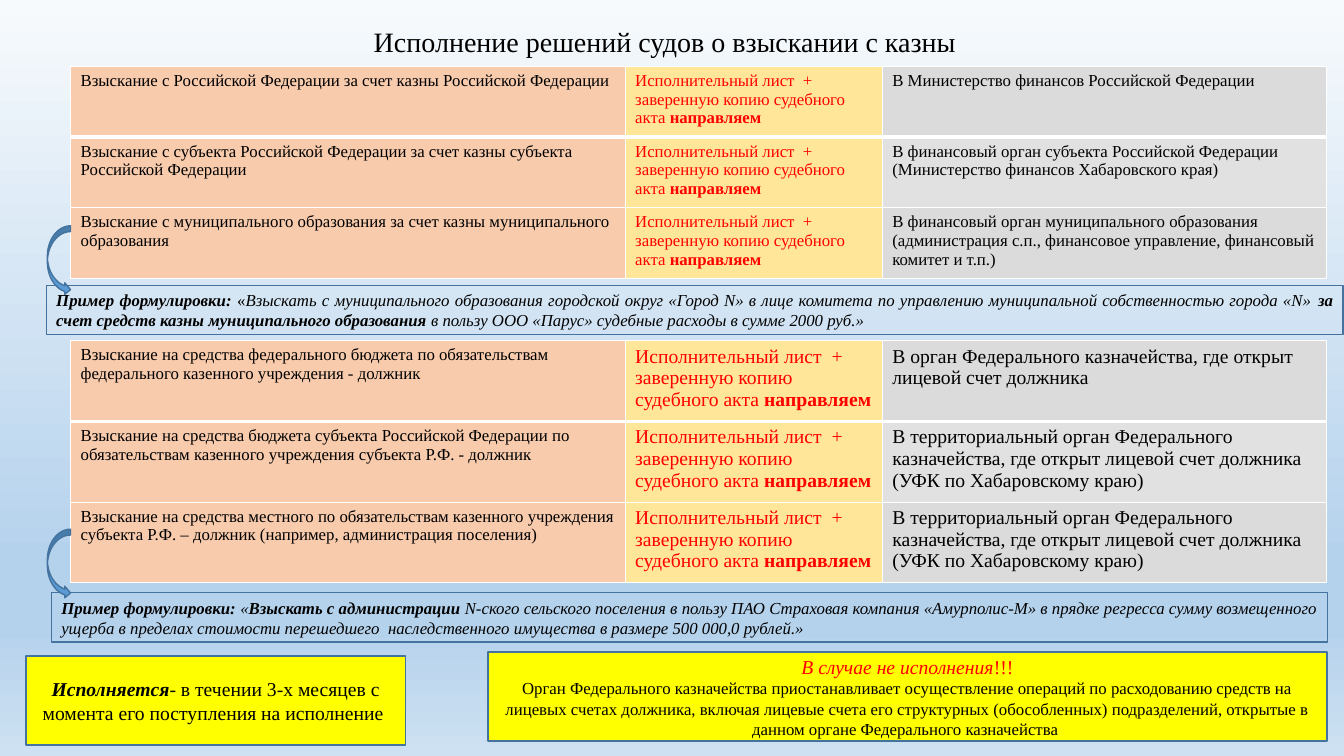
from copy import deepcopy
from dataclasses import dataclass

from lxml.etree import SubElement
from pptx import Presentation
from pptx.dml.color import RGBColor
from pptx.enum.shapes import MSO_SHAPE as Preset
from pptx.enum.text import MSO_ANCHOR as Anchor, PP_ALIGN as Align
from pptx.oxml.ns import qn
from pptx.util import Inches, Pt


@dataclass(frozen=True)
class Theme:
    font: str = "Times New Roman"
    title: int = 20
    large: int = 14
    small: int = 12
    black: str = "000000"
    red: str = "FF0000"
    white: str = "FFFFFF"
    outline: str = "43739E"
    arrow: str = "5B9BD5"
    yellow: str = "FFFF00"
    claim: str = "F8CBAD"
    action: str = "FFE699"
    recipients: tuple = ("DBDBDB", "E1E1E1")
    backdrop: tuple = ((0, "F7FAFD"), (0.74, "B5D2EC"), (0.83, "B5D2EC"), (1, "CEE1F2"))


THEME = Theme()

TITLE = "Исполнение решений судов о взыскании с казны"
ACTION = [("Исполнительный лист  + заверенную копию судебного акта ", ""), ("направляем", "b")]
TERRITORIAL = (
    "В территориальный орган Федерального казначейства, где открыт лицевой счет должника "
    "(УФК по Хабаровскому краю)"
)
TREASURY_ROWS = [
    ("Взыскание с Российской Федерации за счет казны Российской Федерации",
     "В Министерство финансов Российской Федерации"),
    ("Взыскание с субъекта Российской Федерации за счет казны субъекта Российской Федерации",
     "В финансовый орган субъекта Российской Федерации (Министерство финансов Хабаровского края)"),
    ("Взыскание с муниципального образования за счет казны муниципального образования",
     "В финансовый орган муниципального образования (администрация с.п., финансовое управление, "
     "финансовый комитет и т.п.)"),
]
BUDGET_ROWS = [
    ("Взыскание на средства федерального бюджета по обязательствам федерального казенного "
     "учреждения - должник",
     "В орган Федерального казначейства, где открыт лицевой счет должника"),
    ("Взыскание на средства бюджета субъекта Российской Федерации по обязательствам казенного "
     "учреждения субъекта Р.Ф. - должник", TERRITORIAL),
    ("Взыскание на средства местного по обязательствам казенного учреждения субъекта Р.Ф. – "
     "должник (например, администрация поселения)", TERRITORIAL),
]
TREASURY_EXAMPLE = [
    ("Пример формулировки: ", "bi"),
    ("«", ""),
    ("Взыскать с муниципального образования городской округ «Город N» в лице комитета по "
     "управлению муниципальной собственностью города «N» ", "i"),
    ("за счет средств казны муниципального образования", "bi"),
    (" в пользу ООО «Парус» судебные расходы в сумме 2000 руб.»", "i"),
]
BUDGET_EXAMPLE = [
    ("Пример формулировки: ", "bi"),
    ("«", "i"),
    ("Взыскать с администрации ", "bi"),
    ("N-ского сельского поселения в пользу ПАО Страховая компания «Амурполис-М» в прядке регресса "
     "сумму возмещенного ущерба в пределах стоимости перешедшего  наследственного имущества в "
     "размере 500 000,0 рублей.»", "i"),
]
DEADLINE = [("Исполняется", "bi"),
            ("- в течении 3-х месяцев с момента его поступления на исполнение ", "")]
WARNING = [("В случае не исполнения", "i"), ("!!!", "")]
CONSEQUENCE = [
    ("Орган Федерального казначейства приостанавливает осуществление операций по расходованию "
     "средств на лицевых счетах должника, включая лицевые счета его структурных (обособленных) "
     "подразделений, открытые в данном органе Федерального казначейства ", ""),
]

WIDTH, HEIGHT = 13.33, 7.5
TABLE_LEFT = 0.7
COLUMNS = (5.5, 2.55, 4.41)
TABLE_RIGHT = TABLE_LEFT + sum(COLUMNS)
NOTE_HEIGHT = 0.49
ARROW_SIZE = (0.23, 0.69)
BOX_HEIGHT = 0.88
SECTIONS = [
    (0.66, 0.7, TREASURY_ROWS, THEME.small, (0.46, 2.83, 12.86), TREASURY_EXAMPLE, 2.24),
    (3.38, 0.8, BUDGET_ROWS, THEME.large, (0.51, 5.88, 12.66), BUDGET_EXAMPLE, 5.25),
]
DEADLINE_BOX = (0.26, 6.51, 3.76, BOX_HEIGHT)
WARNING_BOX = (4.84, 6.47, TABLE_RIGHT - 4.84, BOX_HEIGHT)


def inches(*lengths):
    return [Inches(length) for length in lengths]


def write(paragraph, runs, size, color=THEME.black, align=None):
    paragraph.alignment = align
    for text, style in runs:
        run = paragraph.add_run()
        run.text = text
        font = run.font
        font.name, font.size = THEME.font, Pt(size)
        font.bold, font.italic = "b" in style, "i" in style
        font.color.rgb = RGBColor.from_string(color)


def paint(item, color):
    item.fill.solid()
    item.fill.fore_color.rgb = RGBColor.from_string(color)


def add_preset(slide, preset, box, fill=None):
    shape = slide.shapes.add_shape(preset, *inches(*box))
    shape.shadow.inherit = False
    if fill:
        paint(shape, fill)
    else:
        shape.fill.background()
    shape.line.color.rgb = RGBColor.from_string(THEME.outline)
    shape.line.width = Pt(1)
    return shape


def add_panel(slide, box, paragraphs, align, fill=None):
    frame = add_preset(slide, Preset.RECTANGLE, box, fill).text_frame
    frame.word_wrap = True
    frame.vertical_anchor = Anchor.MIDDLE
    for index, (runs, size, color) in enumerate(paragraphs):
        paragraph = frame.add_paragraph() if index else frame.paragraphs[0]
        write(paragraph, runs, size, color, align)


def add_borders(cell, row):
    properties = cell._tc.get_or_add_tcPr()
    widths = {"L": 1, "R": 1, "T": 3 if row == 1 else 1, "B": 3 if row == 0 else 1}
    for position, (side, width) in enumerate(widths.items()):
        line = SubElement(properties, qn(f"a:ln{side}"), w=str(Pt(width)))
        fill = SubElement(line, qn("a:solidFill"))
        SubElement(fill, qn("a:srgbClr"), val=THEME.white)
        properties.insert(position, line)


def add_rules(slide, top, row_height, rows, size):
    box = (TABLE_LEFT, top, sum(COLUMNS), row_height * len(rows))
    table = slide.shapes.add_table(len(rows), len(COLUMNS), *inches(*box)).table
    table.first_row = table.horz_banding = False
    for column, width in zip(table.columns, COLUMNS):
        column.width = Inches(width)
    for index, (claim, recipient) in enumerate(rows):
        table.rows[index].height = Inches(row_height)
        contents = [
            ([(claim, "")], THEME.small, THEME.black, THEME.claim),
            (ACTION, size, THEME.red, THEME.action),
            ([(recipient, "")], size, THEME.black, THEME.recipients[index % 2]),
        ]
        for cell, (runs, text_size, color, fill) in zip(table.rows[index].cells, contents):
            paint(cell, fill)
            add_borders(cell, index)
            write(cell.text_frame.paragraphs[0], runs, text_size, color)


def set_backdrop(slide):
    fill = slide.background.fill
    fill.gradient()
    fill.gradient_angle = 270
    stop_list = slide.element.find(".//" + qn("a:gsLst"))
    while len(stop_list) < len(THEME.backdrop):
        stop_list.append(deepcopy(stop_list[0]))
    for stop, (position, color) in zip(fill.gradient_stops, THEME.backdrop):
        stop.position = position
        stop.color.rgb = RGBColor.from_string(color)


def main():
    presentation = Presentation()
    presentation.slide_width, presentation.slide_height = inches(WIDTH, HEIGHT)
    slide = presentation.slides.add_slide(presentation.slide_layouts[6])
    set_backdrop(slide)

    title = slide.shapes.add_textbox(*inches(3.58, 0.19, 6.03, 0.44)).text_frame
    title.word_wrap = False
    write(title.paragraphs[0], [(TITLE, "")], THEME.title, align=Align.CENTER)

    for top, row_height, rows, size, note, example, arrow_top in SECTIONS:
        add_rules(slide, top, row_height, rows, size)
        add_panel(slide, (*note, NOTE_HEIGHT), [(example, THEME.small, THEME.black)], Align.JUSTIFY)
        arrow_box = (TABLE_LEFT - ARROW_SIZE[0], arrow_top, *ARROW_SIZE)
        add_preset(slide, Preset.CURVED_RIGHT_ARROW, arrow_box, THEME.arrow)

    add_panel(slide, DEADLINE_BOX, [(DEADLINE, THEME.large, THEME.black)],
              Align.CENTER, THEME.yellow)
    add_panel(slide, WARNING_BOX,
              [(WARNING, THEME.large, THEME.red), (CONSEQUENCE, THEME.small, THEME.black)],
              Align.CENTER, THEME.yellow)
    presentation.save("out.pptx")


if __name__ == "__main__":
    main()
